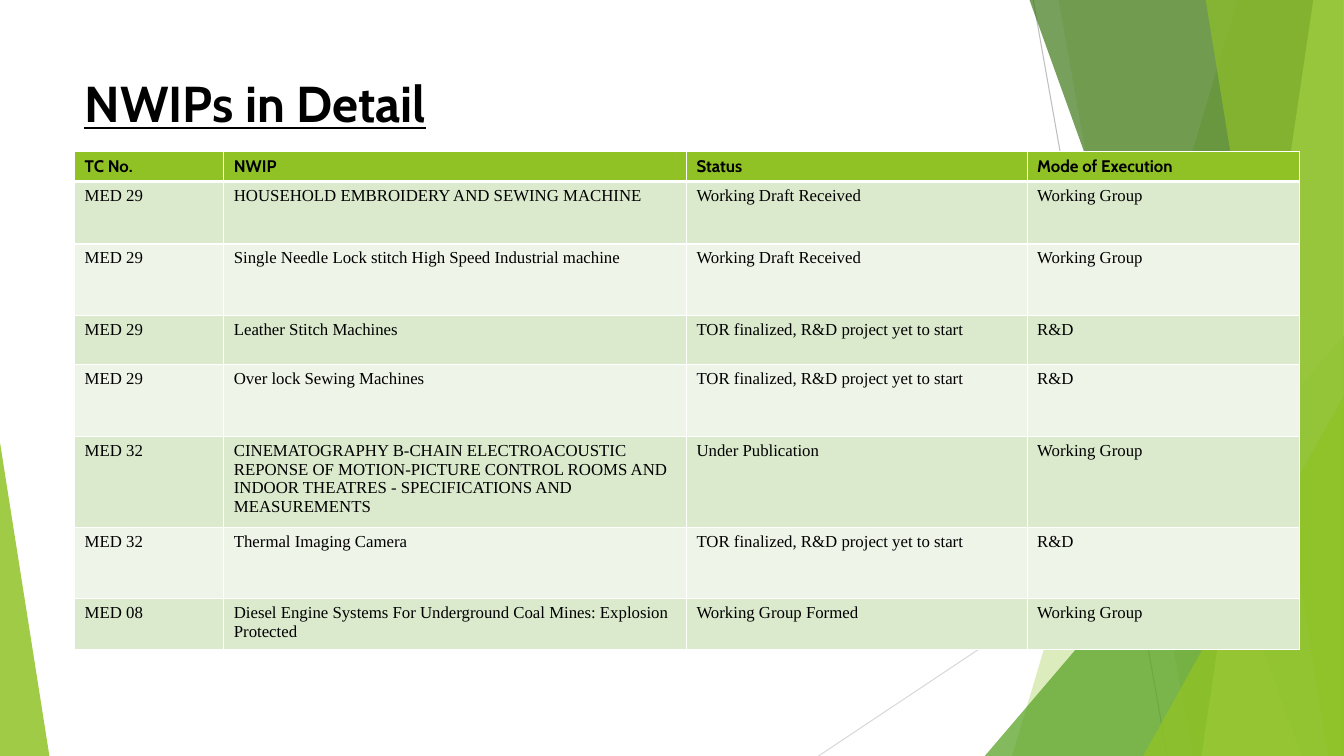
import pptx
import pptx.util
import pptx.dml.color
import pptx.enum.shapes
import pptx.enum.text
import pptx.oxml
import pptx.oxml.ns
import pptx.oxml.xmlchemy

Inches, Pt = pptx.util.Inches, pptx.util.Pt
RGBColor = pptx.dml.color.RGBColor
TRIANGLE = pptx.enum.shapes.MSO_SHAPE.ISOSCELES_TRIANGLE
STRAIGHT = pptx.enum.shapes.MSO_CONNECTOR.STRAIGHT

BLACK = RGBColor(0x00, 0x00, 0x00)
LIME = RGBColor(0x90, 0xC2, 0x26)
GREEN = RGBColor(0x54, 0xA0, 0x21)
FOREST = RGBColor(0x3F, 0x78, 0x19)
PALE_LIME = RGBColor(0xC0, 0xE4, 0x74)
ODD_BAND = RGBColor(0xDB, 0xE9, 0xCD)
EVEN_BAND = RGBColor(0xEE, 0xF4, 0xE8)
GREY = RGBColor(0xBF, 0xBF, 0xBF)
LIGHT_GREY = RGBColor(0xD9, 0xD9, 0xD9)

# Content
TITLE = "NWIPs in Detail"
HEADINGS = ("TC No.", "NWIP", "Status", "Mode of Execution")
TOR = "TOR finalized, R&D project yet to start"
DRAFT = "Working Draft Received"
GROUP = "Working Group"
PROPOSALS = [
    ("MED 29", "HOUSEHOLD EMBROIDERY AND SEWING MACHINE", DRAFT, GROUP),
    ("MED 29", "Single Needle Lock stitch High Speed Industrial machine", DRAFT, GROUP),
    ("MED 29", "Leather Stitch Machines", TOR, "R&D"),
    ("MED 29", "Over lock Sewing Machines", TOR, "R&D"),
    ("MED 32", "CINEMATOGRAPHY B-CHAIN ELECTROACOUSTIC REPONSE OF MOTION-PICTURE "
               "CONTROL ROOMS AND INDOOR THEATRES - SPECIFICATIONS AND MEASUREMENTS",
     "Under Publication", GROUP),
    ("MED 32", "Thermal Imaging Camera", TOR, "R&D"),
    ("MED 08", "Diesel Engine Systems For Underground Coal Mines: Explosion Protected",
     "Working Group Formed", GROUP),
]
COLUMN_WIDTHS = (1.48, 4.59, 3.38, 2.7)
ROW_HEIGHTS = (0.29, 0.62, 0.71, 0.49, 0.71, 0.83, 0.71, 0.5)

TITLE_FONT = {"name": "Cabin", "size": Pt(36), "bold": True, "underline": True}
HEADING_FONT = {"name": "Cabin", "size": Pt(12), "bold": True}
BODY_FONT = {"name": "Times New Roman", "size": Pt(12), "bold": False}

# Decoration: rays are (x1, y1, x2, y2, colour)
RIGHT, BOTTOM = 13.33, 7.5
RAYS = [(10.25, 0, 11.58, BOTTOM, GREY), (RIGHT, 4.03, 8.12, BOTTOM, LIGHT_GREY)]
# Bands reach the right edge: ("band", top x, bottom x, colour, opacity)
# Wedges stand on the bottom edge: ("wedge", left, top, width, apex, colour, opacity)
FACETS = [
    ("band", 12.28, 10.04, LIME, 30),
    ("band", 10.5, 11.83, LIME, 20),
    ("wedge", 9.77, 3.33, 3.56, 1, GREEN, 72),
    ("band", 10.21, 12.91, FOREST, 70),
    ("band", 13.03, 11.92, PALE_LIME, 70),
    ("band", 11.96, 13.18, LIME, 65),
    ("wedge", 11.34, 3.93, 1.99, 1, LIME, 80),
    ("wedge", 0, 4.39, 0.49, 0, LIME, 85),
]

deck = pptx.Presentation()
deck.slide_width, deck.slide_height = Inches(13.333), Inches(7.5)
slide = deck.slides.add_slide(deck.slide_layouts[6])
shapes = slide.shapes


def add_band(top_x, bottom_x):
    outline = shapes.build_freeform(Inches(top_x), Inches(-0.01))
    corners = [(RIGHT, -0.01), (RIGHT, BOTTOM), (bottom_x, BOTTOM)]
    outline.add_line_segments([(Inches(x), Inches(y)) for x, y in corners], close=True)
    return outline.convert_to_shape()


def add_wedge(left, top, width, apex):
    wedge = shapes.add_shape(TRIANGLE, Inches(left), Inches(top),
                             Inches(width), Inches(BOTTOM - top))
    wedge.adjustments[0] = apex
    return wedge


def write(frame, text, font):
    run = frame.paragraphs[0].add_run()
    run.text = text
    run.font.color.rgb = BLACK
    for attribute, value in font.items():
        setattr(run.font, attribute, value)


def set_borders(cell, bottom_width):
    widths = {"lnL": 1, "lnR": 1, "lnT": 1, "lnB": bottom_width}
    properties = cell._tc.get_or_add_tcPr()
    for place, (side, width) in enumerate(widths.items()):
        properties.insert(place, pptx.oxml.parse_xml(
            f'<a:{side} {pptx.oxml.ns.nsdecls("a")} w="{int(Pt(width))}"><a:solidFill>'
            f'<a:srgbClr val="FFFFFF"/></a:solidFill></a:{side}>'))


# Rays
for x1, y1, x2, y2, colour in RAYS:
    ray = shapes.add_connector(STRAIGHT, Inches(x1), Inches(y1), Inches(x2), Inches(y2))
    ray.line.color.rgb = colour
    ray.line.width = Pt(0.75)
    ray._element.spPr.append(pptx.oxml.xmlchemy.OxmlElement("a:effectLst"))

# Translucent facets
BUILDERS = {"band": add_band, "wedge": add_wedge}
for kind, *geometry, colour, opacity in FACETS:
    facet = BUILDERS[kind](*geometry)
    facet.shadow.inherit = False
    facet.line.fill.background()
    facet.fill.solid()
    facet.fill.fore_color.rgb = colour
    alpha = pptx.oxml.xmlchemy.OxmlElement("a:alpha")
    alpha.set("val", str(opacity * 1000))
    facet._element.spPr.find(".//" + pptx.oxml.ns.qn("a:srgbClr")).append(alpha)

# Title
title = shapes.add_textbox(Inches(0.74), Inches(0.67), Inches(9.4), Inches(1.44)).text_frame
title.word_wrap = True
title.vertical_anchor = pptx.enum.text.MSO_ANCHOR.TOP
write(title, TITLE, TITLE_FONT)

# Table of proposals
rows = [HEADINGS] + PROPOSALS
table = shapes.add_table(len(rows), len(HEADINGS), Inches(0.74), Inches(1.5),
                         Inches(sum(COLUMN_WIDTHS)), Inches(sum(ROW_HEIGHTS))).table
for column, width in zip(table.columns, COLUMN_WIDTHS):
    column.width = Inches(width)
for r, (texts, height) in enumerate(zip(rows, ROW_HEIGHTS)):
    table.rows[r].height = Inches(height)
    heading = r == 0
    fill = LIME if heading else (EVEN_BAND, ODD_BAND)[r % 2]
    for c, text in enumerate(texts):
        cell = table.cell(r, c)
        cell.fill.solid()
        cell.fill.fore_color.rgb = fill
        set_borders(cell, 3 if heading else 1)
        write(cell.text_frame, text, HEADING_FONT if heading else BODY_FONT)

deck.save("out.pptx")
